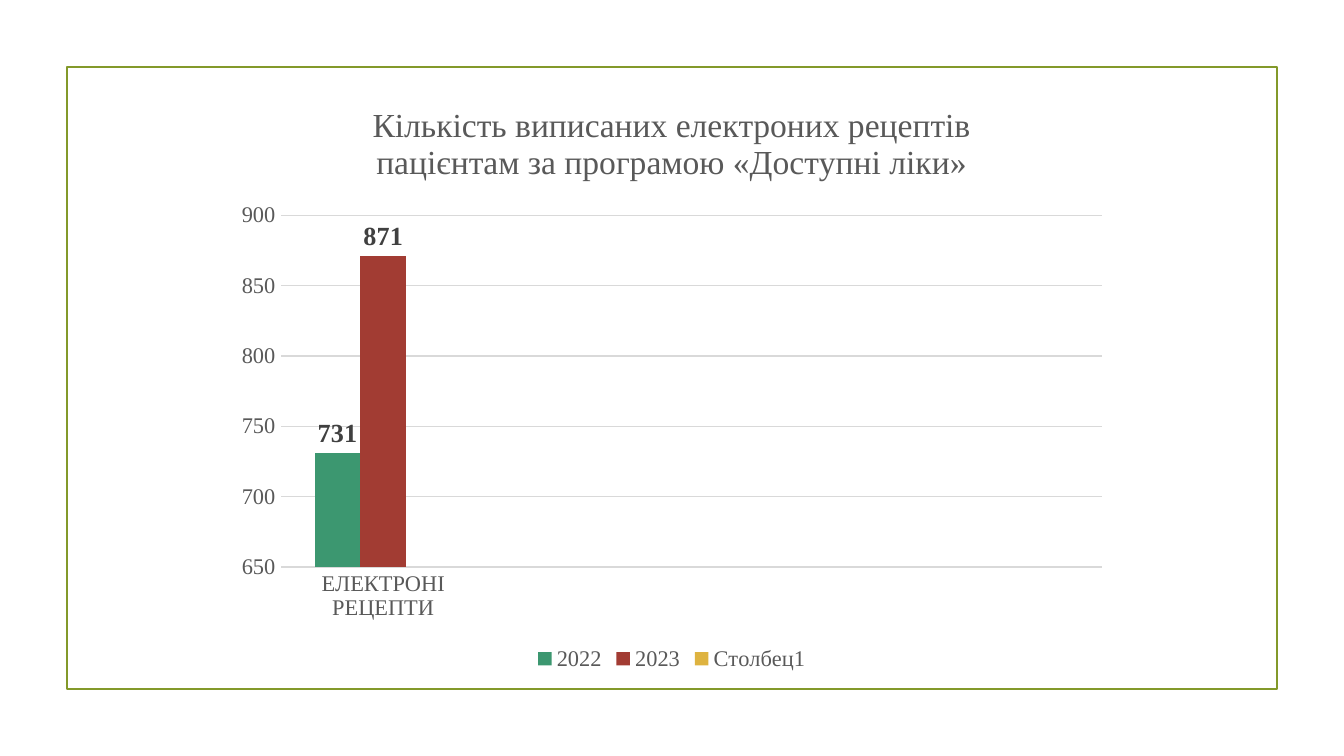
from pptx import Presentation
from pptx import util as u
from pptx.chart import data
from pptx.dml import color
from pptx.enum import chart as ch, shapes

OLIVE = color.RGBColor(0x83, 0x99, 0x2A)
GREEN = color.RGBColor(0x3C, 0x97, 0x70)
RED = color.RGBColor(0xA2, 0x3C, 0x33)
YELLOW = color.RGBColor(0xDE, 0xB3, 0x40)
GREY = color.RGBColor(0x59, 0x59, 0x59)
DARK = color.RGBColor(0x40, 0x40, 0x40)
LIGHT = color.RGBColor(0xD9, 0xD9, 0xD9)
FONT = "Times New Roman"


def style(font, size, tint, bold=False):
    font.name = FONT
    font.size = u.Pt(size)
    font.color.rgb = tint
    font.bold = bold


deck = Presentation()
deck.slide_width, deck.slide_height = u.Cm(25.4), u.Cm(14.29)
page = deck.slides.add_slide(deck.slide_layouts[6])

# Frame
frame = page.shapes.add_shape(
    shapes.MSO_SHAPE.RECTANGLE, u.Cm(1.27), u.Cm(1.27), u.Cm(22.86), u.Cm(11.76))
frame.shadow.inherit = False
frame.fill.background()
frame.line.color.rgb = OLIVE
frame.line.width = u.Pt(1.25)

# Chart data: one filled category and three empty ones
counts = data.CategoryChartData()
counts.categories = ["ЕЛЕКТРОНІ РЕЦЕПТИ", "", "", ""]
for name, value in (("2022", 731), ("2023", 871), ("Столбец1", None)):
    counts.add_series(name, [value, None, None, None])
chart = page.shapes.add_chart(
    ch.XL_CHART_TYPE.COLUMN_CLUSTERED,
    u.Cm(4.23), u.Cm(1.5), u.Cm(16.93), u.Cm(11.28), counts).chart
chart.font.name = FONT
chart.font.size = u.Pt(10)

# Title
chart.has_title = True
para = chart.chart_title.text_frame.paragraphs[0]
span = para.add_run()
span.text = "Кількість виписаних електроних рецептів пацієнтам за програмою «Доступні ліки»"
style(span.font, 18, GREY)
chart.chart_title.include_in_layout = False

# Columns and value labels
plot = chart.plots[0]
plot.gap_width = 150
plot.overlap = 0
plot.vary_by_categories = False
for series, tint in zip(plot.series, (GREEN, RED, YELLOW)):
    series.format.fill.solid()
    series.format.fill.fore_color.rgb = tint
    series.invert_if_negative = False
    if tint != YELLOW:
        labels = series.data_labels
        labels.show_value = True
        labels.position = ch.XL_LABEL_POSITION.OUTSIDE_END
        style(labels.font, 14, DARK, True)

# Axes
for axis in (chart.category_axis, chart.value_axis):
    axis.major_tick_mark = axis.minor_tick_mark = ch.XL_TICK_MARK.NONE
    axis.format.line.fill.background()
    style(axis.tick_labels.font, 12, GREY)
scale = chart.value_axis
scale.minimum_scale, scale.maximum_scale, scale.major_unit = 650, 900, 50
scale.has_major_gridlines = True
scale.major_gridlines.format.line.color.rgb = LIGHT
scale.major_gridlines.format.line.width = u.Pt(0.75)

# Legend
chart.has_legend = True
chart.legend.position = ch.XL_LEGEND_POSITION.BOTTOM
chart.legend.include_in_layout = False
style(chart.legend.font, 12, GREY)

deck.save("out.pptx")
